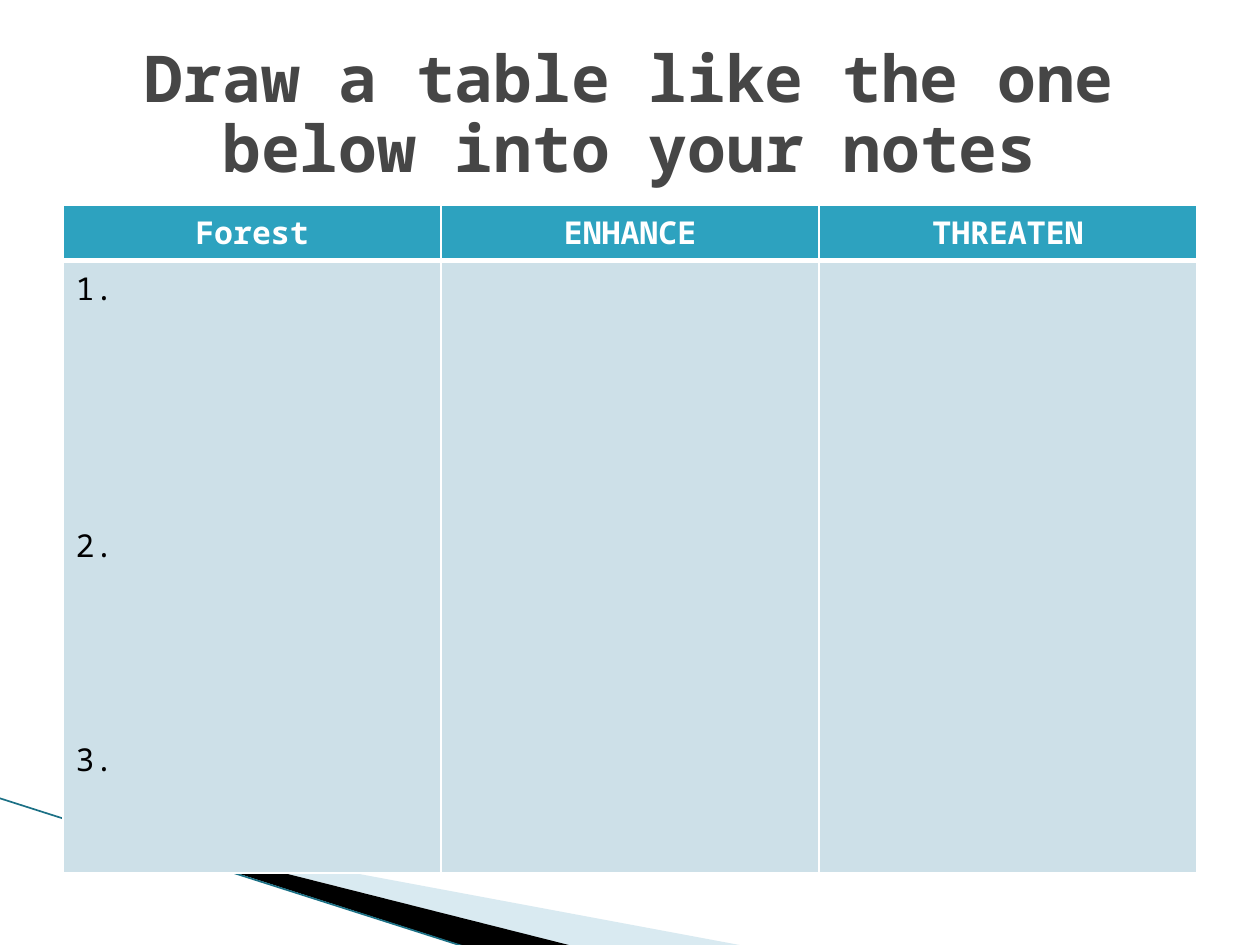
from lxml import etree
from pptx import Presentation
from pptx.dml.color import RGBColor
from pptx.enum.shapes import MSO_CONNECTOR
from pptx.enum.text import MSO_ANCHOR, MSO_AUTO_SIZE, PP_ALIGN
from pptx.oxml.ns import qn
from pptx.util import Pt

STRAIGHT = MSO_CONNECTOR.STRAIGHT
MIDDLE = MSO_ANCHOR.MIDDLE
NO_AUTOFIT = MSO_AUTO_SIZE.NONE
CENTER, LEFT = PP_ALIGN.CENTER, PP_ALIGN.LEFT

WHITE = RGBColor(0xFF, 0xFF, 0xFF)
BLACK = RGBColor(0, 0, 0)
TITLE_GREY = RGBColor(0x46, 0x46, 0x46)
HEADER_TEAL = RGBColor(0x2D, 0xA2, 0xBF)
BODY_BLUE = RGBColor(0xCD, 0xE0, 0xE8)
SWOOSH_BLUE = RGBColor(0xA0, 0xCB, 0xDC)
LINE_TEAL = RGBColor(0x1B, 0x70, 0x85)

FONT = "Noto Sans Mono"
TEXT_SIZE = 18
LINE_HEIGHT = 24.5
TITLE_ONLY = 5

HEADINGS = ["Forest", "ENHANCE", "THREATEN"]
# Each numbered entry with the writing lines left free above it
ENTRIES = [("1.", 0), ("2.", 5), ("3.", 4)]


def style_text(para, size, color, bold, align):
    para.alignment = align
    for span in para.runs:
        span.font.name = FONT
        span.font.size = Pt(size)
        span.font.bold = bold
        span.font.color.rgb = color


def add_band(page, points, color, opacity=100):
    (first_x, first_y), *others = points
    builder = page.shapes.build_freeform(Pt(first_x), Pt(first_y))
    builder.add_line_segments([(Pt(x), Pt(y)) for x, y in others])
    band = builder.convert_to_shape()
    band.shadow.inherit = False
    band.fill.solid()
    band.fill.fore_color.rgb = color
    band.line.fill.background()
    if opacity < 100:
        tint = band.fill._xPr.find(".//" + qn("a:srgbClr"))
        etree.SubElement(tint, qn("a:alpha"), val=str(opacity * 1000))


def add_swoosh(page, left, top, bottom):
    """Two slanted bands and a thin line running off the bottom edge."""
    add_band(page, [(left + 1.5, top + 1), (left + 390, bottom),
                    (left + 290, bottom), (left + 1.5, top)], SWOOSH_BLUE, 40)
    add_band(page, [(left, top), (left + 291, bottom),
                    (left + 230, bottom + 0.5), (left + 1, top + 0.5)], BLACK)
    edge = page.shapes.add_connector(
        STRAIGHT, Pt(left - 38.7), Pt(top - 11.5), Pt(left + 229), Pt(bottom + 0.5))
    edge.line.color.rgb = LINE_TEAL
    edge.line.width = Pt(0.95)
    etree.SubElement(edge._element.spPr, qn("a:effectLst"))


def add_title(page, left, top, width, height):
    title = page.shapes.title
    title.left, title.top, title.width, title.height = map(
        Pt, (left, top, width, height))
    frame = title.text_frame
    frame.text = "Draw a table like the one below into your notes"
    frame.word_wrap = True
    frame.auto_size = NO_AUTOFIT
    frame.vertical_anchor = MIDDLE
    para = frame.paragraphs[0]
    para.line_spacing = 0.9
    style_text(para, 36.9, TITLE_GREY, True, CENTER)


def style_cell(cell, color, top_width, bottom_width):
    properties = cell._tc.get_or_add_tcPr()
    borders = {"a:lnL": 1, "a:lnR": 1, "a:lnT": top_width, "a:lnB": bottom_width}
    for tag, width in borders.items():
        border = etree.SubElement(properties, qn(tag), w=str(Pt(width)))
        fill = etree.SubElement(border, qn("a:solidFill"))
        etree.SubElement(fill, qn("a:srgbClr"), val=str(WHITE))
    cell.fill.solid()
    cell.fill.fore_color.rgb = color


def add_notes_table(page, left, top, width, header_height, body_height):
    table = page.shapes.add_table(
        2, len(HEADINGS), Pt(left), Pt(top), Pt(width),
        Pt(header_height + body_height)).table
    table.horz_banding = False
    table.rows[0].height = Pt(header_height)
    table.rows[1].height = Pt(body_height)

    # Headings over empty columns
    for column, heading in enumerate(HEADINGS):
        table.columns[column].width = Pt(width / len(HEADINGS))
        header, body = table.cell(0, column), table.cell(1, column)
        header.text_frame.text = heading
        style_text(header.text_frame.paragraphs[0], TEXT_SIZE, WHITE, True, CENTER)
        style_cell(header, HEADER_TEAL, 1, 3)
        style_cell(body, BODY_BLUE, 3, 1)

    # Numbered entries in the first column
    frame = table.cell(1, 0).text_frame
    frame.text = "\n".join(number for number, _ in ENTRIES)
    for para, (_, free_lines) in zip(frame.paragraphs, ENTRIES):
        if free_lines:
            para.space_before = Pt(free_lines * LINE_HEIGHT)
        style_text(para, TEXT_SIZE, BLACK, False, LEFT)


def main():
    deck = Presentation()
    deck.slide_width, deck.slide_height = Pt(720), Pt(540)
    page = deck.slides.add_slide(deck.slide_layouts[TITLE_ONLY])
    add_swoosh(page, 38, 467.5, 541)
    add_notes_table(page, 36, 117, 648, 31, 350)
    add_title(page, 36, 21.6, 648, 90)
    deck.save("out.pptx")


if __name__ == "__main__":
    main()
